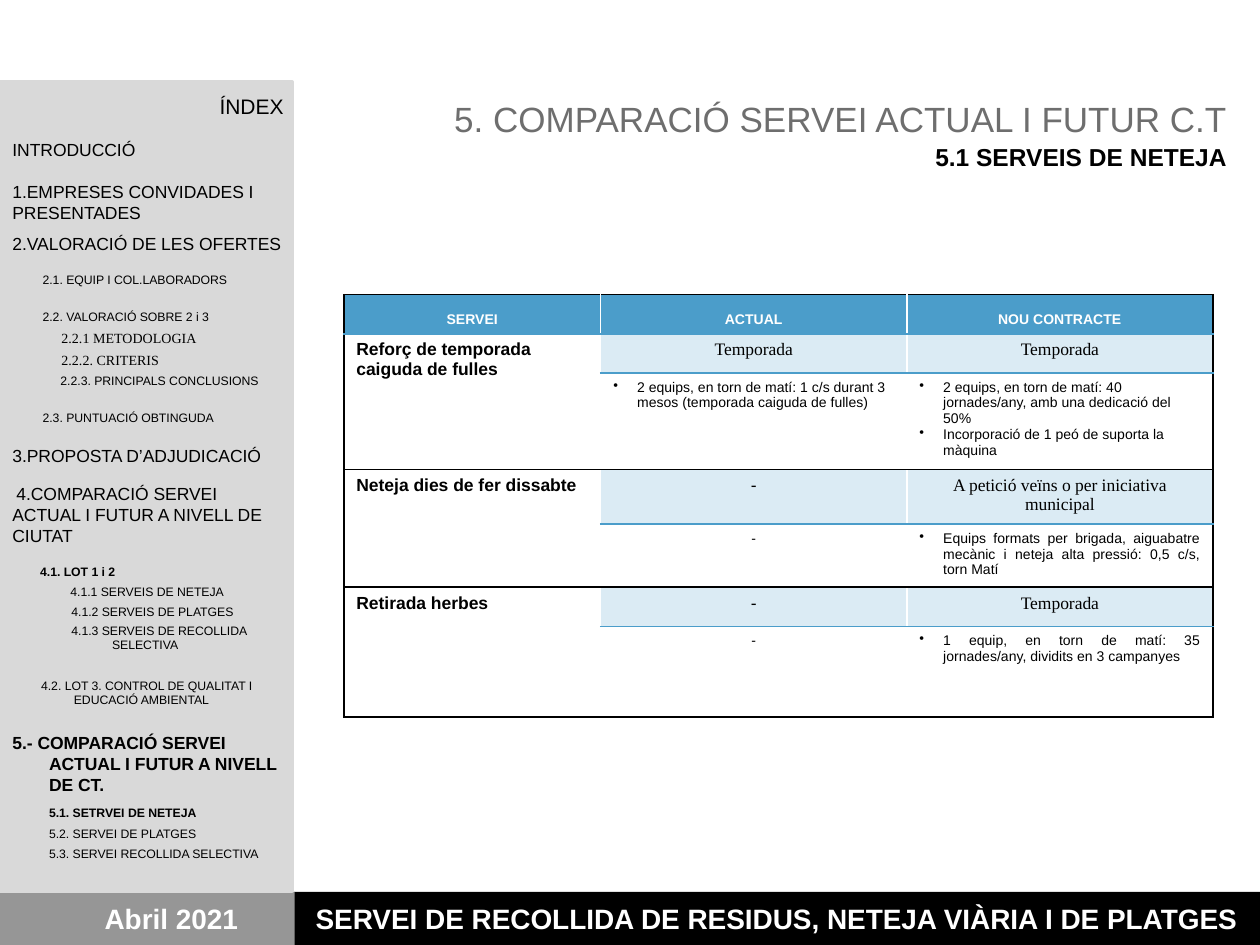
from lxml.etree import SubElement
from pptx import Presentation
from pptx.dml.color import RGBColor
from pptx.enum.shapes import MSO_SHAPE
from pptx.enum.text import MSO_ANCHOR, PP_ALIGN
from pptx.oxml.ns import qn
from pptx.util import Cm, Pt

BLACK, WHITE, GREY, BLUE, PALE = "000000", "FFFFFF", "D9D9D9", "4B9DCA", "DBEBF4"
SERIF = "Times New Roman"
LEFT, CENTER, RIGHT, JUSTIFY = PP_ALIGN.LEFT, PP_ALIGN.CENTER, PP_ALIGN.RIGHT, PP_ALIGN.JUSTIFY

BANDS = [
    ("SERVEI DE RECOLLIDA DE RESIDUS, NETEJA VIÀRIA I DE PLATGES", (5.92, 17.98, 19.48, 1.07), BLACK, 0),
    ("Abril 2021", (0, 17.98, 5.94, 1.07), "969696", 0.97),
]
TITLE = "5. COMPARACIÓ SERVEI ACTUAL I FUTUR C.T"
SUBTITLE = "5.1 SERVEIS DE NETEJA"

LEVELS = {
    "heading": dict(size=12, line=14, align=RIGHT),
    "chapter": dict(size=10, line=12),
    "current": dict(size=10, line=12, bold=True),
    "section": dict(size=7, line=8),
    "active": dict(size=7, line=8, bold=True),
    "serif": dict(size=8, line=9, font=SERIF),
}
# level, text, space before, left margin, first-line indent
INDEX = [
    ("heading", "ÍNDEX", 0, 0, 0),
    ("chapter", "INTRODUCCIÓ", 11.4, 0, 0),
    ("chapter", "1.EMPRESES CONVIDADES I PRESENTADES", 12, 0, 0),
    ("chapter", "2.VALORACIÓ DE LES OFERTES", 5.7, 0, 0),
    ("section", "2.1. EQUIP I COL.LABORADORS", 10.9, 0.61, 0),
    ("section", "2.2. VALORACIÓ SOBRE 2 i 3", 13.1, 0.61, 0),
    ("serif", "2.2.1 METODOLOGIA", 3.7, 0.99, 0),
    ("serif", "2.2.2. CRITERIS", 3.6, 0.99, 0),
    ("section", "2.2.3. PRINCIPALS CONCLUSIONS", 3.3, 0.97, 0),
    ("section", "2.3. PUNTUACIÓ OBTINGUDA", 13.2, 0.61, 0),
    ("chapter", "3.PROPOSTA D’ADJUDICACIÓ", 11.4, 0, 0),
    ("chapter", "4.COMPARACIÓ SERVEI ACTUAL I FUTUR A NIVELL DE CIUTAT", 9.7, 0, 0.08),
    ("active", "4.1. LOT 1 i 2", 10.9, 0.56, 0),
    ("section", "4.1.1 SERVEIS DE NETEJA", 3.4, 1.17, 0),
    ("section", "4.1.2 SERVEIS DE PLATGES", 3.4, 1.19, 0),
    ("section", "4.1.3 SERVEIS DE RECOLLIDA SELECTIVA", 2.9, 2.01, -0.82),
    ("section", "4.2. LOT 3. CONTROL DE QUALITAT I EDUCACIÓ AMBIENTAL", 15.4, 1.24, -0.66),
    ("current", "5.- COMPARACIÓ SERVEI ACTUAL I FUTUR A NIVELL DE CT.", 14.3, 0.74, -0.74),
    ("active", "5.1. SETRVEI DE NETEJA", 6.3, 0.74, 0),
    ("section", "5.2. SERVEI DE PLATGES", 4, 0.74, 0),
    ("section", "5.3. SERVEI RECOLLIDA SELECTIVA", 3.4, 0.74, 0),
]

HEADERS = ["SERVEI", "ACTUAL", "NOU CONTRACTE"]
SERVICES = [
    ("Reforç de temporada caiguda de fulles", ["Temporada", "Temporada"],
     [["2 equips, en torn de matí: 1 c/s durant 3 mesos (temporada caiguda de fulles)"],
      ["2 equips, en torn de matí: 40 jornades/any, amb una dedicació del 50%",
       "Incorporació de 1 peó de suporta la màquina"]], LEFT),
    ("Neteja dies de fer dissabte", ["-", "A petició veïns o per iniciativa municipal"],
     [["-"], ["Equips formats per brigada, aiguabatre mecànic i neteja alta pressió: 0,5 c/s, torn Matí"]], JUSTIFY),
    ("Retirada herbes", ["-", "Temporada"],
     [["-"], ["1 equip, en torn de matí: 35 jornades/any, dividits en 3 campanyes"]], JUSTIFY),
]
COLUMNS = [5.18, 6.17, 6.17]
ROWS = [0.79, 0.79, 1.93, 1.09, 1.27, 0.79, 1.83]


def color(value):
    """Turn a hex string into a colour."""
    return RGBColor.from_string(value)


def write(frame, text, size=8, font="Arial", ink=BLACK, bold=False, align=LEFT,
          before=0, line=None, margin=0, indent=0, bullet=False):
    """Add one formatted paragraph, filling the first one while it is empty."""
    first = frame.paragraphs[0]
    para = frame.add_paragraph() if first.runs else first
    para.alignment = align
    para.space_before = Pt(before)
    para.space_after = Pt(0)
    para.line_spacing = Pt(line) if line else 1.0
    properties = para._p.get_or_add_pPr()
    properties.set("marL", str(Cm(margin)))
    properties.set("indent", str(Cm(indent)))
    if bullet:
        SubElement(properties, qn("a:buChar"), char="•")
    span = para.add_run()
    span.text = text
    span.font.size = Pt(size)
    span.font.name = font
    span.font.bold = bold
    span.font.color.rgb = color(ink)


def add_band(page, place, fill):
    """Add a plain filled rectangle."""
    band = page.shapes.add_shape(MSO_SHAPE.RECTANGLE, *map(Cm, place))
    band.shadow.inherit = False
    band.fill.solid()
    band.fill.fore_color.rgb = color(fill)
    band.line.fill.background()
    return band


def style_cell(cell, fill, edges):
    """Set a cell's fill and its left, right, top and bottom borders."""
    properties = cell._tc.get_or_add_tcPr()
    for side, ink in zip("LRTB", edges):
        border = SubElement(properties, qn(f"a:ln{side}"), w=str(Pt(1)))
        SubElement(SubElement(border, qn("a:solidFill")), qn("a:srgbClr"), val=ink)
    cell.fill.solid()
    cell.fill.fore_color.rgb = color(fill)


def add_index(page):
    """Add the side panel with the index."""
    panel = add_band(page, (-0.05, 1.65, 5.94, 16.31), GREY)
    panel.line.color.rgb = color(GREY)
    panel.line.width = Pt(2)
    frame = page.shapes.add_textbox(*map(Cm, (0, 1.78, 5.97, 16.2))).text_frame
    frame.word_wrap = True
    for level, text, before, margin, indent in INDEX:
        write(frame, text, before=before, margin=margin, indent=indent, **LEVELS[level])


def add_title(page):
    """Place and fill the title."""
    title = page.shapes.title
    title.left, title.top, title.width, title.height = map(Cm, (7.54, 1.83, 17.45, 2.29))
    frame = title.text_frame
    frame.vertical_anchor = MSO_ANCHOR.TOP
    frame.word_wrap = True
    write(frame, TITLE, size=20, ink="6E6E6E", align=RIGHT)
    write(frame, SUBTITLE, size=14, bold=True, align=RIGHT, before=1.4)


def add_services(page):
    """Add the table that compares the services."""
    table = page.shapes.add_table(len(ROWS), len(COLUMNS), Cm(6.93), Cm(5.94),
                                  Cm(sum(COLUMNS)), Cm(sum(ROWS))).table
    for column, width in zip(table.columns, COLUMNS):
        column.width = Cm(width)
    for row, height in zip(table.rows, ROWS):
        row.height = Cm(height)

    levels = [BLACK, BLUE] + [BLUE, BLACK] * len(SERVICES)
    for row in range(len(ROWS)):
        for column in range(len(COLUMNS)):
            top, bottom = levels[row:row + 2]
            if row and column == 0:
                bottom = BLACK
            fill = BLUE if row == 0 else PALE if row % 2 and column else WHITE
            edges = (WHITE if column else BLACK, BLACK if column == 2 else WHITE, top, bottom)
            style_cell(table.cell(row, column), fill, edges)

    for column, text in enumerate(HEADERS):
        cell = table.cell(0, column)
        cell.vertical_anchor = MSO_ANCHOR.BOTTOM
        write(cell.text_frame, text, ink=WHITE, bold=True, align=CENTER)
    for number, (name, periods, details, align) in enumerate(SERVICES):
        row = 1 + 2 * number
        table.cell(row, 0).merge(table.cell(row + 1, 0))
        write(table.cell(row, 0).text_frame, name, size=10, bold=True)
        for column, (period, items) in enumerate(zip(periods, details), 1):
            font = "Arial" if period == "-" else SERIF
            write(table.cell(row, column).text_frame, period, size=10, font=font, align=CENTER)
            for item in items:
                style = dict(align=CENTER) if item == "-" else dict(
                    align=align, margin=0.48, indent=-0.48, bullet=True)
                write(table.cell(row + 1, column).text_frame, item, **style)


def main():
    """Build and save the slide."""
    deck = Presentation()
    deck.slide_width, deck.slide_height = Cm(25.4), Cm(19.05)
    page = deck.slides.add_slide(deck.slide_layouts[5])
    for text, place, fill, margin in BANDS:
        frame = add_band(page, place, fill).text_frame
        frame.word_wrap = True
        frame.vertical_anchor = MSO_ANCHOR.MIDDLE
        write(frame, text, size=16, ink=WHITE, bold=True, align=CENTER, margin=margin)
    add_index(page)
    add_title(page)
    add_services(page)
    deck.save("out.pptx")


if __name__ == "__main__":
    main()
